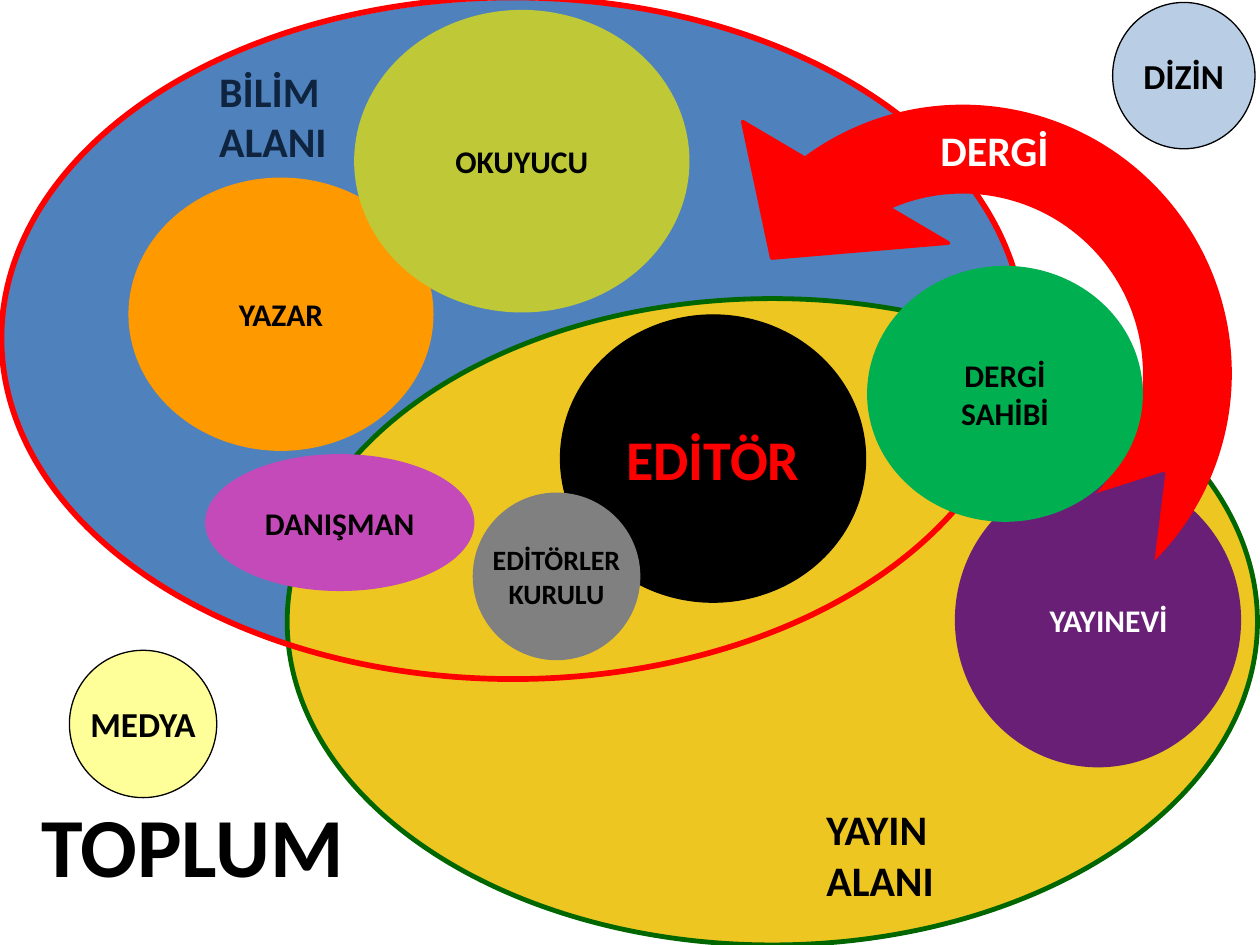
from dataclasses import dataclass

from pptx import Presentation
from pptx.dml.color import RGBColor
from pptx.enum.shapes import MSO_SHAPE
from pptx.enum.text import MSO_ANCHOR, PP_ALIGN
from pptx.util import Cm, Pt

BLACK = RGBColor(0x00, 0x00, 0x00)
WHITE = RGBColor(0xFF, 0xFF, 0xFF)
RED = RGBColor(0xFF, 0x00, 0x00)
BLUE = RGBColor(0x4F, 0x81, 0xBD)
PALE_BLUE = RGBColor(0xB9, 0xCD, 0xE5)
NAVY = RGBColor(0x0F, 0x24, 0x3E)
GOLD = RGBColor(0xED, 0xC6, 0x21)
DARK_GREEN = RGBColor(0x00, 0x66, 0x00)
GREEN = RGBColor(0x00, 0xB0, 0x50)
LIME = RGBColor(0xBF, 0xC9, 0x37)
PURPLE = RGBColor(0x6A, 0x1F, 0x77)
MAGENTA = RGBColor(0xC4, 0x4A, 0xB9)
ORANGE = RGBColor(0xFF, 0x99, 0x00)
GREY = RGBColor(0x80, 0x80, 0x80)
PALE_YELLOW = RGBColor(0xFF, 0xFF, 0x99)


@dataclass
class Box:
    """A rectangle in centimetres."""
    left: float
    top: float
    width: float
    height: float

    def inside(self, left, top, width, height):
        return Box(self.left + left, self.top + top, width, height)

    def lengths(self):
        return Cm(self.left), Cm(self.top), Cm(self.width), Cm(self.height)


def write_text(shape, text, size, color, align, wrap):
    frame = shape.text_frame
    frame.word_wrap = wrap
    para = frame.paragraphs[0]
    para.text = text
    para.alignment = align
    para.font.name = "Calibri"
    para.font.size = Pt(size)
    para.font.bold = True
    para.font.color.rgb = color


def add_figure(page, box, fill=None, line=None, weight=0.75, kind=MSO_SHAPE.OVAL):
    figure = page.shapes.add_shape(kind, *box.lengths())
    figure.shadow.inherit = False
    if fill is None:
        figure.fill.background()
    else:
        figure.fill.solid()
        figure.fill.fore_color.rgb = fill
    if line is None:
        figure.line.fill.background()
    else:
        figure.line.color.rgb = line
        figure.line.width = Pt(weight)
    return figure


def add_role(page, box, text, fill, size=18, color=BLACK, wrap=False, **style):
    role = add_figure(page, box, fill, **style)
    write_text(role, text, size, color, PP_ALIGN.CENTER, wrap)
    role.text_frame.vertical_anchor = MSO_ANCHOR.MIDDLE
    return role


def add_label(page, box, text, size=24, color=BLACK, align=PP_ALIGN.LEFT, wrap=True):
    label = page.shapes.add_textbox(*box.lengths())
    write_text(label, text, size, color, align, wrap)


def draw_publishing_field(page, box):
    add_figure(page, box, GOLD, DARK_GREEN, 2.75)
    publisher = add_role(page, box.inside(13.46, 3.51, 5.77, 5.94), "YAYINEVİ", PURPLE, color=WHITE)
    publisher.text_frame.margin_left = Cm(0.68)
    add_label(page, box.inside(10.62, 10.06, 2.77, 2.31), "YAYIN\nALANI", wrap=False)


def draw_science_field(page, box):
    add_role(page, box.inside(2.54, 3.58, 6.15, 5.51), "YAZAR", ORANGE)
    add_role(page, box.inside(11.25, 6.35, 6.15, 5.79), "EDİTÖR", BLACK, 32, RED, line=BLACK)
    add_role(page, box.inside(7.09, 0.2, 6.76, 6.1), "OKUYUCU", LIME)
    add_role(page, box.inside(4.12, 9.19, 5.36, 2.69), "DANIŞMAN", MAGENTA, wrap=True,
             line=MAGENTA, weight=2, kind=MSO_SHAPE.FLOWCHART_CONNECTOR)
    add_role(page, box.inside(9.48, 9.93, 3.38, 3.38), "EDİTÖRLER\nKURULU", GREY, 16)
    add_label(page, box.inside(4.12, 1.19, 3.38, 3.07), "BİLİM\nALANI", color=NAVY)
    # Red rim, also visible across the publishing field
    add_figure(page, box.inside(-0.02, -0.05, box.width, box.height), line=RED, weight=3.25)


def draw_journal(page, box):
    # Curved arrow from the publisher to the science field
    arrow = add_figure(page, box, RED, RED, 2, MSO_SHAPE.CIRCULAR_ARROW)
    for index, value in enumerate((0.125, 16.436, 204.577, 104.707, 0.175)):
        arrow.adjustments[index] = value
    arrow.rotation = 38.9
    arrow.element.spPr.xfrm.set("flipH", "1")
    add_label(page, box.inside(5.74, 1.78, 3.58, 1.27), "DERGİ", color=WHITE,
              align=PP_ALIGN.CENTER)
    # Notch in the arrow's tail
    notch = add_figure(page, box.inside(9.45, 8.76, 1.98, 1.55), PURPLE, PURPLE, 2,
                       MSO_SHAPE.ISOSCELES_TRIANGLE)
    notch.rotation = 39.7
    add_role(page, box.inside(4.96, 4.75, 5.56, 5.16), "DERGİ\nSAHİBİ", GREEN)


def draw_society(page, box):
    add_label(page, box.inside(0.58, 15.88, 7.14, 2.31), "TOPLUM", 48)
    add_role(page, box.inside(1.4, 13.11, 2.97, 2.97), "MEDYA", PALE_YELLOW, 20, line=BLACK)
    add_role(page, box.inside(22.43, 0.05, 2.87, 2.95), "DİZİN", PALE_BLUE, 20, line=BLACK)


def main():
    deck = Presentation()
    deck.slide_width, deck.slide_height = Cm(25.4), Cm(19.05)
    page = deck.slides.add_slide(deck.slide_layouts[6])

    science = Box(0.05, 0, 20.62, 13.74)
    add_figure(page, science, BLUE)  # lies behind the publishing field
    draw_publishing_field(page, Box(5.79, 6.02, 19.56, 13.03))
    draw_science_field(page, science)
    draw_journal(page, Box(12.52, 0.61, 13.84, 13.77))
    draw_society(page, Box(0, 0, 25.4, 19.05))
    deck.save("out.pptx")


if __name__ == "__main__":
    main()
